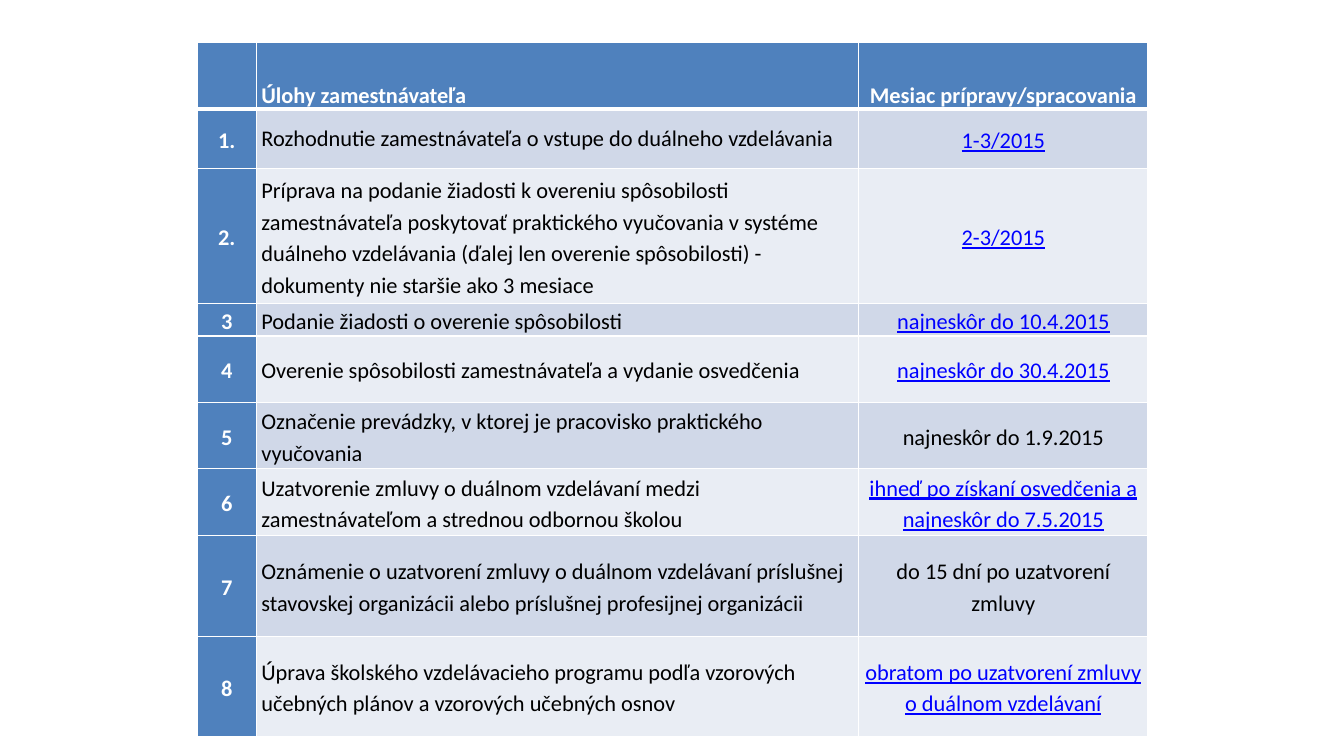
from dataclasses import dataclass

from lxml import etree
from pptx import Presentation
from pptx.dml.color import RGBColor
from pptx.enum.text import MSO_ANCHOR, PP_ALIGN
from pptx.oxml.ns import qn
from pptx.util import Pt

LEFT, CENTER = PP_ALIGN.LEFT, PP_ALIGN.CENTER
BOTTOM, MIDDLE = MSO_ANCHOR.BOTTOM, MSO_ANCHOR.MIDDLE


@dataclass(frozen=True)
class Theme:
    font: str = "Calibri"
    size: float = 16
    line_spacing: float = 1.15
    inset: float = 3.75
    accent: str = "4F81BD"
    bands: tuple = ("D0D8E8", "E9EDF4")
    light: str = "FFFFFF"
    dark: str = "000000"
    link: str = "0000FF"
    thin: float = 1
    thick: float = 3


THEME = Theme()

COLUMN_WIDTHS = (42, 430.5, 206.5)
ROW_HEIGHTS = (47.5, 42.5, 96.5, 23, 47.5, 47.5, 47.5, 72, 72)
HEADER = ("", "Úlohy zamestnávateľa", "Mesiac prípravy/spracovania")
TASKS = (
    ("1.", "Rozhodnutie zamestnávateľa o vstupe do duálneho vzdelávania",
     "1-3/2015"),
    ("2.", "Príprava na podanie žiadosti k overeniu spôsobilosti zamestnávateľa "
     "poskytovať praktického vyučovania v systéme duálneho vzdelávania "
     "(ďalej len overenie spôsobilosti) - dokumenty nie staršie ako 3 mesiace",
     "2-3/2015"),
    ("3", "Podanie žiadosti o overenie spôsobilosti", "najneskôr do 10.4.2015"),
    ("4", "Overenie spôsobilosti zamestnávateľa a vydanie osvedčenia",
     "najneskôr do 30.4.2015"),
    ("5", "Označenie prevádzky, v ktorej je pracovisko praktického vyučovania",
     "najneskôr do 1.9.2015"),
    ("6", "Uzatvorenie zmluvy o duálnom vzdelávaní medzi zamestnávateľom "
     "a strednou odbornou školou",
     "ihneď po získaní osvedčenia a najneskôr do 7.5.2015"),
    ("7", "Oznámenie o uzatvorení zmluvy o duálnom vzdelávaní príslušnej "
     "stavovskej organizácii alebo príslušnej profesijnej organizácii",
     "do 15 dní po uzatvorení zmluvy"),
    ("8", "Úprava školského vzdelávacieho programu podľa vzorových učebných "
     "plánov a vzorových učebných osnov",
     "obratom po uzatvorení zmluvy o duálnom vzdelávaní"),
)
PLAIN_DATES = ("5", "7")


def set_borders(cell, top, bottom):
    properties = cell._tc.get_or_add_tcPr()
    widths = {"a:lnL": THEME.thin, "a:lnR": THEME.thin, "a:lnT": top, "a:lnB": bottom}
    for index, (tag, width) in enumerate(widths.items()):
        line = etree.Element(qn(tag), w=str(Pt(width)))
        fill = etree.SubElement(line, qn("a:solidFill"))
        etree.SubElement(fill, qn("a:srgbClr"), val=THEME.light)
        properties.insert(index, line)


def fill_cell(cell, text, fill, color, align, anchor=MIDDLE, bold=False,
              underline=False, spacing=THEME.line_spacing):
    cell.fill.solid()
    cell.fill.fore_color.rgb = RGBColor.from_string(fill)
    cell.margin_left = cell.margin_right = Pt(THEME.inset)
    cell.margin_top = cell.margin_bottom = 0
    cell.vertical_anchor = anchor
    para = cell.text_frame.paragraphs[0]
    para.text = text
    para.alignment = align
    para.line_spacing = spacing
    for span in para.runs:
        span.font.name = THEME.font
        span.font.size = Pt(THEME.size)
        span.font.bold = bold
        span.font.underline = underline
        span.font.color.rgb = RGBColor.from_string(color)


def add_grid(page, left, top):
    frame = page.shapes.add_table(
        len(ROW_HEIGHTS), len(COLUMN_WIDTHS), Pt(left), Pt(top),
        Pt(sum(COLUMN_WIDTHS)), Pt(sum(ROW_HEIGHTS)))
    table = frame.table
    for column, width in zip(table.columns, COLUMN_WIDTHS):
        column.width = Pt(width)
    for row, height in zip(table.rows, ROW_HEIGHTS):
        row.height = Pt(height)
    return table


def fill_header(table):
    for cell, text, align in zip(table.rows[0].cells, HEADER, (CENTER, LEFT, CENTER)):
        fill_cell(cell, text, THEME.accent, THEME.light, align, BOTTOM, bold=True)
        set_borders(cell, THEME.thin, THEME.thick)


def fill_tasks(table):
    for index, (number, task, date) in enumerate(TASKS):
        cells = table.rows[index + 1].cells
        band = THEME.bands[index % 2]
        linked = number not in PLAIN_DATES
        fill_cell(cells[0], number, THEME.accent, THEME.light, CENTER, bold=True)
        fill_cell(cells[1], task, band, THEME.dark, LEFT,
                  spacing=THEME.line_spacing if index else 1.0)
        fill_cell(cells[2], date, band, THEME.link if linked else THEME.dark,
                  CENTER, underline=linked)
        for cell in cells:
            set_borders(cell, THEME.thin if index else THEME.thick, THEME.thin)


def main():
    deck = Presentation()
    deck.slide_width, deck.slide_height = Pt(960), Pt(540)
    page = deck.slides.add_slide(deck.slide_layouts[6])
    table = add_grid(page, 141, 30.5)
    fill_header(table)
    fill_tasks(table)
    deck.save("out.pptx")


if __name__ == "__main__":
    main()
